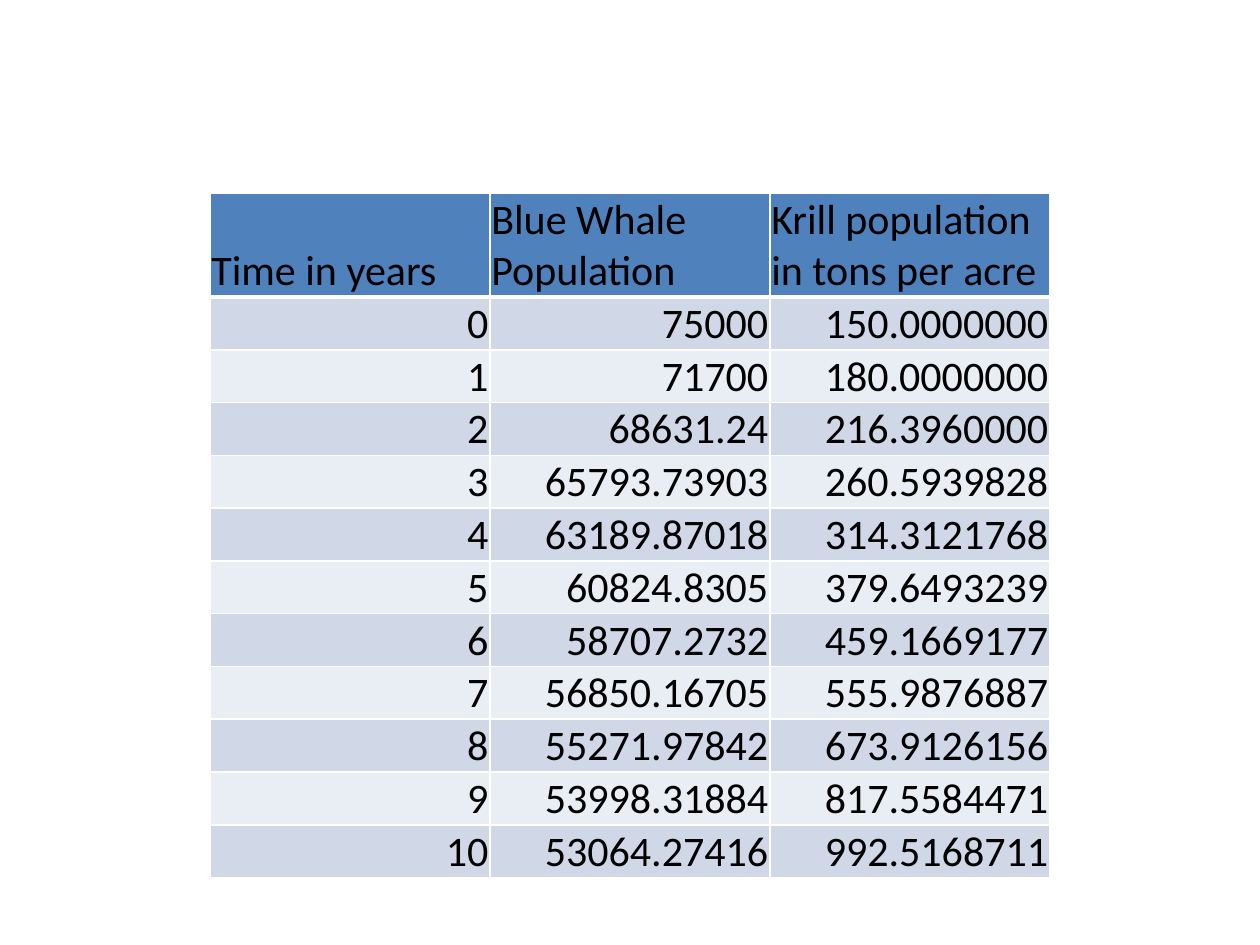
from lxml.etree import SubElement
from pptx import Presentation
from pptx.dml.color import RGBColor
from pptx.enum.text import MSO_ANCHOR, PP_ALIGN
from pptx.oxml.ns import qn
from pptx.util import Cm, Pt


def color(value):
    return RGBColor.from_string(value)


def add_border(cell, side, width):
    line = SubElement(cell._tc.get_or_add_tcPr(), qn(f"a:ln{side}"), w=str(Pt(width)))
    fill = SubElement(line, qn("a:solidFill"))
    SubElement(fill, qn("a:srgbClr"), val="FFFFFF")


rows = [
    ("Time in years", "Blue Whale Population", "Krill population in tons per acre"),
    ("0", "75000", "150.0000000"),
    ("1", "71700", "180.0000000"),
    ("2", "68631.24", "216.3960000"),
    ("3", "65793.73903", "260.5939828"),
    ("4", "63189.87018", "314.3121768"),
    ("5", "60824.8305", "379.6493239"),
    ("6", "58707.2732", "459.1669177"),
    ("7", "56850.16705", "555.9876887"),
    ("8", "55271.97842", "673.9126156"),
    ("9", "53998.31884", "817.5584471"),
    ("10", "53064.27416", "992.5168711"),
]
column_width = 5.645
row_height = 1.04

deck = Presentation()
deck.slide_width = Cm(25.4)
deck.slide_height = Cm(19.05)
page = deck.slides.add_slide(deck.slide_layouts[6])

population_table = page.shapes.add_table(
    len(rows), len(rows[0]), Cm(4.23), Cm(3.89),
    Cm(column_width * len(rows[0])), Cm(row_height * len(rows)),
).table
for column in population_table.columns:
    column.width = Cm(column_width)

for row_index, values in enumerate(rows):
    population_table.rows[row_index].height = Cm(row_height)
    is_header = row_index == 0
    band = "D0D8E8" if row_index % 2 else "E9EDF4"
    for column_index, value in enumerate(values):
        cell = population_table.cell(row_index, column_index)
        cell.text = value
        cell.vertical_anchor = MSO_ANCHOR.BOTTOM
        cell.margin_left = cell.margin_right = cell.margin_top = Cm(0.03)
        cell.margin_bottom = 0
        add_border(cell, "L", 1)
        add_border(cell, "R", 1)
        add_border(cell, "T", 3 if row_index == 1 else 1)
        add_border(cell, "B", 3 if is_header else 1)
        cell.fill.solid()
        cell.fill.fore_color.rgb = color("4F81BD" if is_header else band)
        paragraph = cell.text_frame.paragraphs[0]
        paragraph.alignment = PP_ALIGN.LEFT if is_header else PP_ALIGN.RIGHT
        paragraph.font.name = "Calibri"
        paragraph.font.size = Pt(24)
        paragraph.font.bold = False
        paragraph.font.color.rgb = color("000000")

deck.save("out.pptx")
